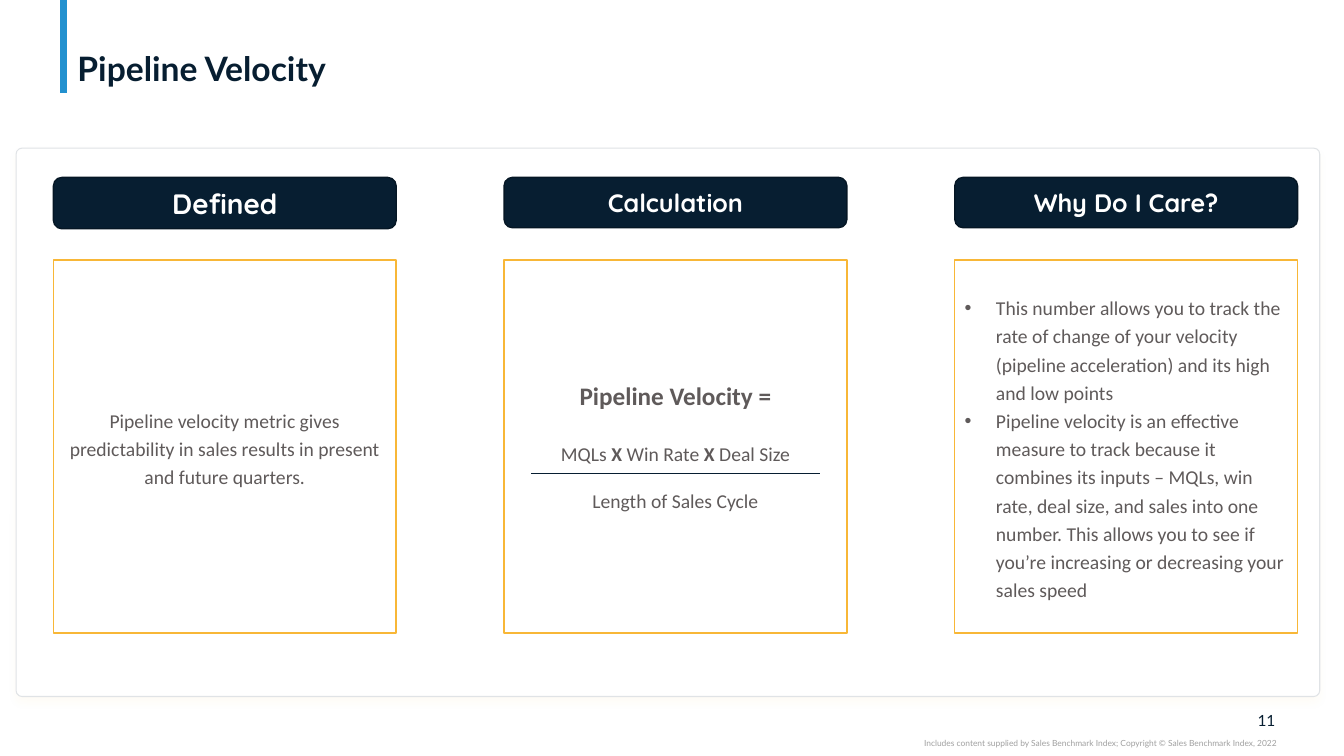
from dataclasses import dataclass

import pptx
import pptx.dml.color
import pptx.enum.shapes
import pptx.enum.text
import pptx.oxml
import pptx.oxml.ns
import pptx.util

Inches = pptx.util.Inches
Pt = pptx.util.Pt
Align = pptx.enum.text.PP_ALIGN
Anchor = pptx.enum.text.MSO_ANCHOR
Kind = pptx.enum.shapes.MSO_SHAPE
NS = pptx.oxml.ns.nsdecls("a")


@dataclass(frozen=True)
class Theme:
    navy: str = "071E31"
    edge: str = "051624"
    blue: str = "2391CF"
    gold: str = "F8B737"
    gray: str = "5F5A5A"
    pale: str = "A0A0A0"
    mist: str = "E0E3E6"
    white: str = "FFFFFF"
    main: str = "Lato"
    head: str = "Quicksand"
    body: str = "Calibri"
    title: int = 24
    label: int = 18
    text: int = 14
    page: int = 11
    note: int = 6


THEME = Theme()


def color(code):
    return pptx.dml.color.RGBColor.from_string(code)


def node(xml):
    return pptx.oxml.parse_xml(xml)


# Text
def write(shape, paras, size=THEME.text, font=THEME.body, ink=THEME.gray,
          bold=False, align=Align.LEFT, anchor=Anchor.TOP, pitch=None,
          bullet=False, inset=None):
    """Fill a shape; a paragraph is a string or (runs, format changes)."""
    frame = shape.text_frame
    frame.word_wrap = True
    frame.vertical_anchor = anchor
    if inset is not None:
        frame.margin_left = frame.margin_right = Inches(inset)
        frame.margin_top = frame.margin_bottom = 0
    for i, item in enumerate(paras):
        runs, style = ([(item, bold)], {}) if isinstance(item, str) else item
        para = frame.add_paragraph() if i else frame.paragraphs[0]
        para.alignment = align
        if pitch:
            para.line_spacing = pitch
        if "before" in style:
            para.space_before = Pt(style["before"])
        if bullet:
            props = para._p.get_or_add_pPr()
            props.set("marL", str(Inches(0.31)))
            props.set("indent", str(-Inches(0.31)))
            props.append(node(f'<a:buFont {NS} typeface="Arial"/>'))
            props.append(node(f'<a:buChar {NS} char="•"/>'))
        for words, heavy in runs:
            run = para.add_run()
            run.text = words
            run.font.name = font
            run.font.size = Pt(style.get("size", size))
            run.font.bold = heavy
            run.font.color.rgb = color(ink)


def label(slide, box, words, **style):
    shape = slide.shapes.add_textbox(*map(Inches, box))
    write(shape, [words], **style)


# Shapes and lines
def block(slide, kind, box, fill, line, width=1):
    shape = slide.shapes.add_shape(kind, *map(Inches, box))
    shape.shadow.inherit = False
    shape.fill.solid()
    shape.fill.fore_color.rgb = color(fill)
    shape.line.color.rgb = color(line)
    shape.line.width = Pt(width)
    return shape


def rule(slide, start, end, ink, width):
    line = slide.shapes.add_connector(
        pptx.enum.shapes.MSO_CONNECTOR.STRAIGHT,
        *map(Inches, start + end))
    line.line.color.rgb = color(ink)
    line.line.width = Pt(width)
    line._element.spPr.append(node(f"<a:effectLst {NS}/>"))


def panel(slide):
    shape = block(slide, Kind.ROUNDED_RECTANGLE, (0.16, 1.47, 12.93, 5.44),
                  THEME.white, THEME.mist, 0.75)
    shape.adjustments[0] = 0.011
    glow = shape._element.spPr.find(pptx.oxml.ns.qn("a:effectLst"))
    glow.append(node(
        f'<a:outerShdw {NS} blurRad="{Pt(6)}" dist="{Pt(4)}" dir="5400000" '
        f'rotWithShape="0"><a:srgbClr val="{THEME.gold}">'
        '<a:alpha val="4000"/></a:srgbClr></a:outerShdw>'))


def column(slide, left, name, paras, size=THEME.label, high=0.5, **style):
    head = block(slide, Kind.ROUNDED_RECTANGLE, (left, 1.76, 3.4, high),
                 THEME.navy, THEME.edge)
    write(head, [name], size=size, font=THEME.head, ink=THEME.white,
          bold=True, align=Align.CENTER, anchor=Anchor.MIDDLE)
    body = block(slide, Kind.RECTANGLE, (left, 2.58, 3.4, 3.7),
                 THEME.white, THEME.gold)
    write(body, paras, anchor=Anchor.MIDDLE, **style)


def main():
    deck = pptx.Presentation()
    deck.slide_width = Inches(13.33)
    deck.slide_height = Inches(7.5)
    slide = deck.slides.add_slide(deck.slide_layouts[6])

    # Title and footer
    rule(slide, (0.63, 0), (0.63, 0.92), THEME.blue, 5)
    label(slide, (0.67, 0.04, 11.99, 0.84), "Pipeline Velocity",
          size=THEME.title, font=THEME.main, ink=THEME.navy, bold=True,
          anchor=Anchor.BOTTOM, pitch=0.9, inset=0.1)
    label(slide, (12.32, 7.05, 0.33, 0.19), "11", size=THEME.page,
          font=THEME.main, ink=THEME.navy, align=Align.RIGHT,
          anchor=Anchor.MIDDLE, inset=0)
    label(slide, (7.5, 7.32, 5.16, 0.1),
          "Includes content supplied by Sales Benchmark Index; "
          "Copyright © Sales Benchmark Index, 2022",
          size=THEME.note, font=THEME.main, ink=THEME.pale,
          align=Align.RIGHT, inset=0)

    # Three columns
    panel(slide)
    lefts = [0.53 + 4.47 * i for i in range(3)]
    column(slide, lefts[0], "Defined", [
        "Pipeline velocity metric gives predictability in sales results "
        "in present and future quarters.",
    ], size=20, high=0.51, align=Align.CENTER, pitch=1.2)
    column(slide, lefts[1], "Calculation", [
        ([("Pipeline Velocity =", True)], {"size": THEME.label}),
        ([("MQLs", False), (" X ", True), ("Win Rate", False),
          (" X ", True), ("Deal Size", False)], {"before": 22}),
        ([("Length of Sales Cycle", False)], {"before": 17}),
    ], align=Align.CENTER)
    column(slide, lefts[2], "Why Do I Care?", [
        "This number allows you to track the rate of change of your "
        "velocity (pipeline acceleration) and its high and low points",
        "Pipeline velocity is an effective measure to track because it "
        "combines its inputs – MQLs, win rate, deal size, and sales into "
        "one number. This allows you to see if you’re increasing or "
        "decreasing your sales speed",
    ], pitch=1.2, bullet=True)

    # Fraction bar
    rule(slide, (5.27, 4.69), (8.13, 4.69), THEME.navy, 0.25)

    deck.save("out.pptx")


if __name__ == "__main__":
    main()
